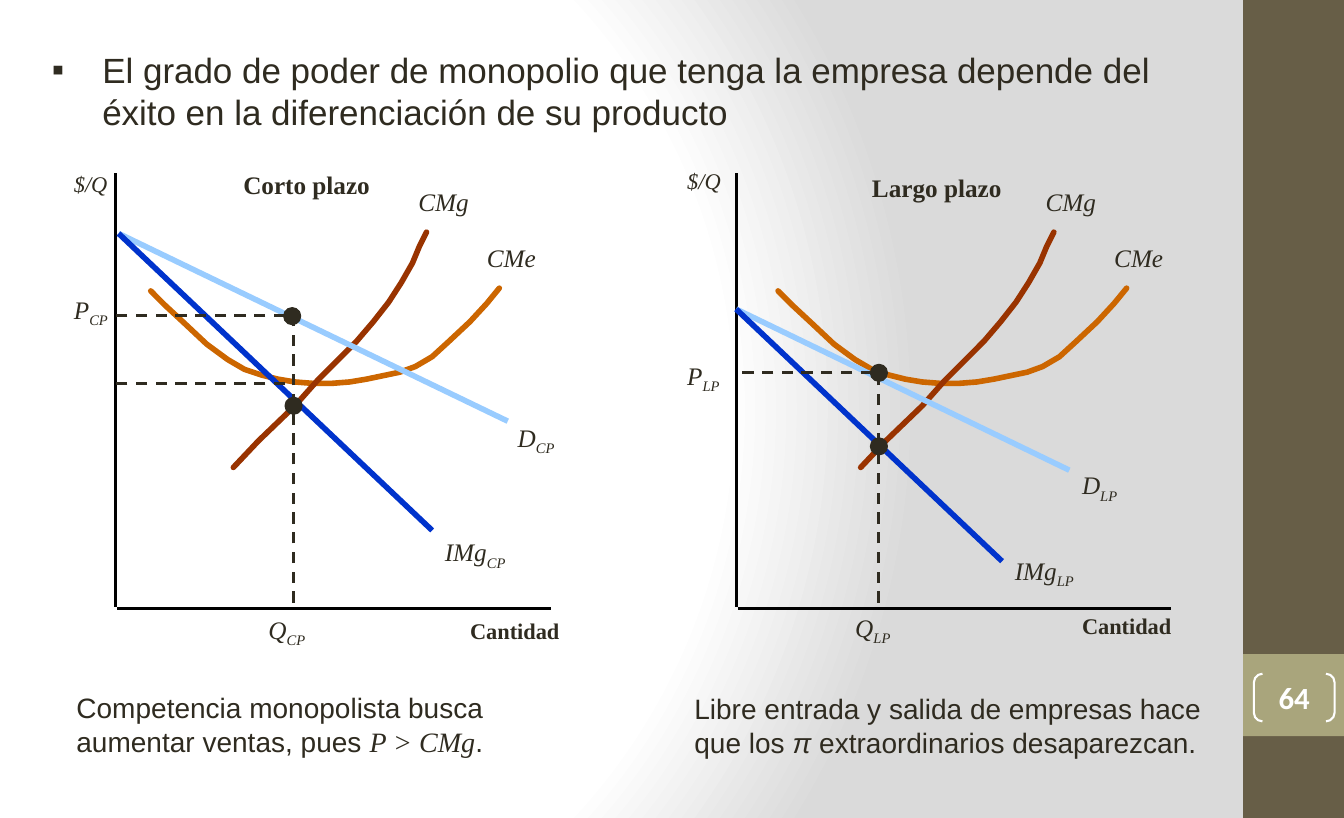
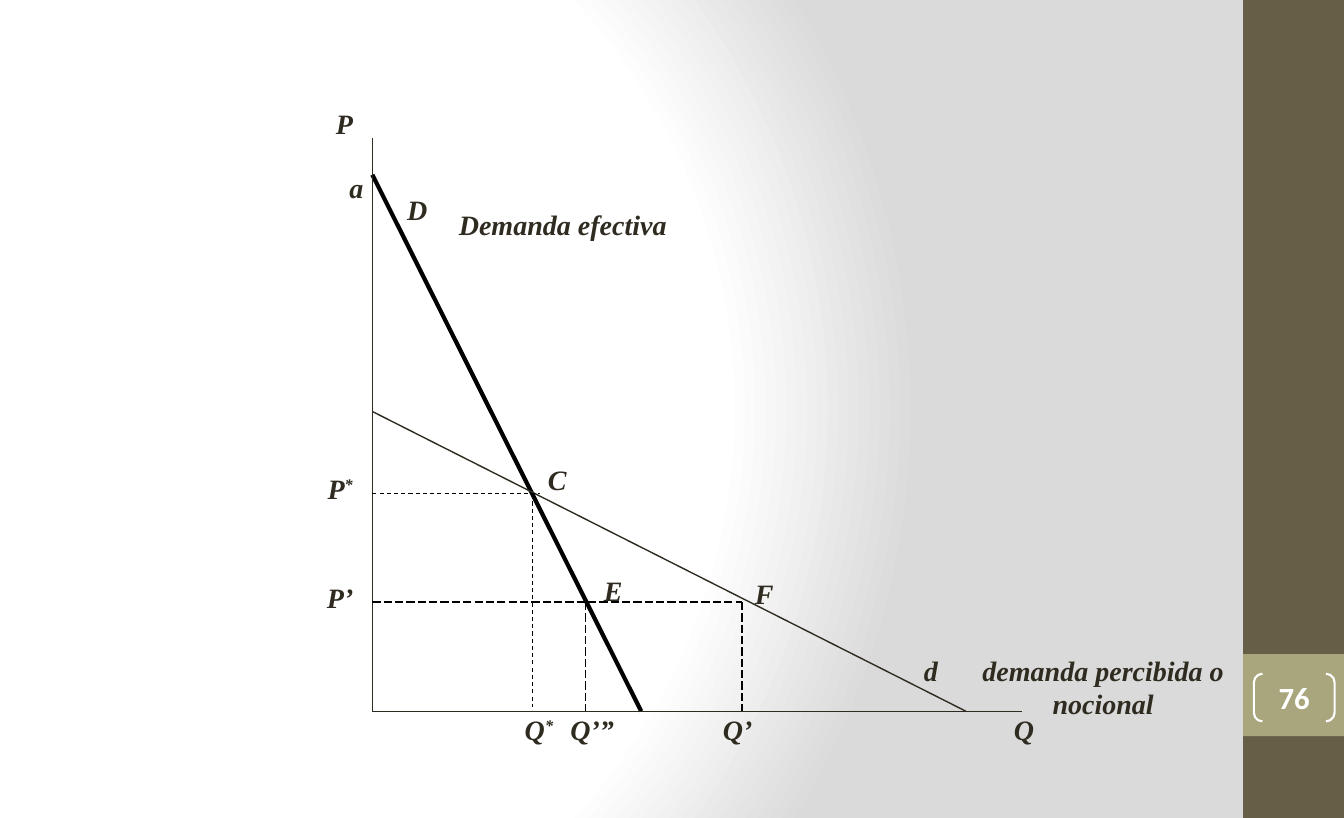
from dataclasses import dataclass

from lxml import etree
from pptx import Presentation
from pptx.dml.color import RGBColor
from pptx.enum.dml import MSO_LINE_DASH_STYLE as Dash
from pptx.enum.shapes import MSO_CONNECTOR, MSO_SHAPE as Shape
from pptx.enum.text import MSO_ANCHOR as Anchor, PP_ALIGN as Align
from pptx.oxml import parse_xml
from pptx.oxml.ns import nsdecls, qn
from pptx.util import Pt


@dataclass(frozen=True)
class Theme:
    width: float = 960
    height: float = 584
    band_width: float = 72
    # Colours
    ink: str = "2F2B20"
    black: str = "000000"
    white: str = "FFFFFF"
    shade: str = "DADADA"
    band: str = "675E47"
    tab: str = "A9A57C"
    average_cost: str = "CC6600"
    marginal_cost: str = "993300"
    demand: str = "99CCFF"
    revenue: str = "0033CC"
    # Fonts and type sizes
    sans: str = "Arial"
    serif: str = "Times New Roman"
    number_font: str = "Calibri"
    lead: float = 25
    number: float = 22
    body: float = 20
    label: float = 18
    axis: float = 16


T = Theme()

# Cost curves, measured from the left end of the average cost curve
AVERAGE_COST = [(0, 84), (10, 94), (24, 107), (40, 122), (55, 133), (67, 140),
                (79, 144), (91, 147), (103, 149), (116, 150), (129, 150),
                (142, 149), (154, 147), (178, 142), (189, 138), (201, 131),
                (213, 120), (228, 106), (240, 93), (249, 82)]
MARGINAL_COST = [(59, 210), (77, 191), (103, 166), (119, 148), (133, 134),
                 (147, 120), (159, 106), (170, 92), (179, 78), (187, 64),
                 (192, 52), (197, 42)]


@dataclass(frozen=True)
class Term:
    """One market panel; positions are relative to the top of its price axis."""
    title: str
    sub: str
    cost_x: float
    start: tuple
    demand_end: tuple
    revenue_end: tuple
    quantity: float
    prices: tuple
    dots: tuple
    at: dict


SHORT = Term("Corto plazo", "CP", 25, (2, 43), (280, 177), (226, 255), 127,
             ((121, 101.5), (121, 150)), ((126, 102), (127, 166)),
             {"unit": (-37, -6), "title": (84, -6), "D": (280, 174),
              "IMg": (228, 256), "Q": (102, 311), "P": (-37, 83),
              "Cantidad": (246, 313)})
LONG = Term("Largo plazo", "LP", 30, (0, 97), (238, 212), (190, 277), 102,
            ((97, 142.5),), ((102, 142.5), (102, 195)),
            {"unit": (-42, -8), "title": (90, -4), "D": (240, 208),
             "IMg": (192, 269), "Q": (78, 310), "P": (-42, 130),
             "Cantidad": (240, 310)})


def rgb(color):
    return RGBColor.from_string(color)


def add_line(s, start, end, color, width, dash=None):
    c = s.shapes.add_connector(MSO_CONNECTOR.STRAIGHT,
                               *(Pt(v) for v in (*start, *end)))
    c.line.color.rgb = rgb(color)
    c.line.width = Pt(width)
    if dash:
        c.line.dash_style = dash
    etree.SubElement(c.element.spPr, qn("a:effectLst"))


def add_curve(s, points, color, width):
    first, *rest = [(Pt(x), Pt(y)) for x, y in points]
    builder = s.shapes.build_freeform(*first)
    builder.add_line_segments(rest, close=False)
    sp = builder.convert_to_shape()
    sp.shadow.inherit = False
    sp.fill.background()
    sp.line.color.rgb = rgb(color)
    sp.line.width = Pt(width)
    sp.element.spPr.find(qn("a:ln")).set("cap", "rnd")


def add_shape(s, kind, box, fill=None, line=None, width=1):
    sp = s.shapes.add_shape(kind, *(Pt(v) for v in box))
    sp.shadow.inherit = False
    if fill:
        sp.fill.solid()
        sp.fill.fore_color.rgb = rgb(fill)
    else:
        sp.fill.background()
    if line:
        sp.line.color.rgb = rgb(line)
        sp.line.width = Pt(width)
    else:
        sp.line.fill.background()
    return sp


def style_run(r, size, font, color=T.ink, bold=False, italic=False, base=0):
    r.font.size = Pt(size)
    r.font.name = font
    r.font.color.rgb = rgb(color)
    r.font.bold = bold
    r.font.italic = italic
    if base:
        r.font._element.set("baseline", str(base * 1000))


def add_text(s, box, runs, size, font, align=Align.LEFT, before=0, margin=0,
             **style):
    """Each run is a text, or a text with its own style changes."""
    sp = s.shapes.add_textbox(*(Pt(v) for v in box))
    tf = sp.text_frame
    tf.word_wrap = True
    p = tf.paragraphs[0]
    p.alignment = align
    p.space_before = Pt(before)
    if margin:
        p._p.get_or_add_pPr().set("marL", str(Pt(margin)))
    for run in runs:
        text, changes = (run, {}) if isinstance(run, str) else run
        r = p.add_run()
        r.text = text
        style_run(r, **{"size": size, "font": font, **style, **changes})
    return sp


def set_background(master):
    fill = master.background.fill
    fill.gradient()
    old = master.element.find(".//" + qn("a:gradFill"))
    stops = "".join(
        f'<a:gs pos="{pos * 1000}"><a:srgbClr val="{color}"/></a:gs>'
        for pos, color in ((0, T.white), (75, T.white), (100, T.shade)))
    old.getparent().replace(old, parse_xml(
        f'<a:gradFill {nsdecls("a")} rotWithShape="1"><a:gsLst>{stops}</a:gsLst>'
        '<a:path path="circle"><a:fillToRect l="20000" t="50000" r="100000"'
        ' b="50000"/></a:path></a:gradFill>'))


def new_slide(prs, number):
    s = prs.slides.add_slide(prs.slide_layouts[6])
    # Side band and its tab
    left = T.width - T.band_width
    add_shape(s, Shape.RECTANGLE, (left, 0, T.band_width, T.height), T.band)
    add_shape(s, Shape.RECTANGLE, (left, 467, T.band_width, 58.5), T.tab)
    # Slide number
    sp = add_shape(s, Shape.DOUBLE_BRACKET, (left + 7.7, 481, 57.6, 34),
                   line=T.white, width=1.5)
    sp.adjustments[0] = 0.18
    tf = sp.text_frame
    tf.margin_left = tf.margin_right = tf.margin_top = tf.margin_bottom = 0
    tf.vertical_anchor = Anchor.MIDDLE
    tf.text = str(number)
    p = tf.paragraphs[0]
    p.alignment = Align.CENTER
    style_run(p.runs[0], T.number, T.number_font, T.white, bold=True)
    return s


def market_panel(s, left, top, term):
    def at(x, y):
        return left + x, top + y

    def label(pos, width, *runs, size=T.label, italic=True, bold=False):
        add_text(s, (*at(*pos), width, 1.6 * size), runs, size, T.serif,
                 italic=italic, bold=bold)

    # Axes
    add_line(s, at(0, 0), at(0, 310), T.black, 2)
    add_line(s, at(1, 311), at(311, 311), T.black, 2)
    label(term.at["unit"], 60, "$/Q", size=T.axis)
    label(term.at["Cantidad"], 100, "Cantidad", size=T.axis, italic=False,
          bold=True)
    label(term.at["title"], 130, term.title, italic=False, bold=True)

    # Cost curves
    for points, color in ((AVERAGE_COST, T.average_cost),
                          (MARGINAL_COST, T.marginal_cost)):
        add_curve(s, [at(term.cost_x + x, y) for x, y in points], color, 4)
    label((term.cost_x + 184, 6), 70, "CMg")
    label((term.cost_x + 233, 46), 70, "CMe")

    # Demand and marginal revenue
    add_line(s, at(*term.start), at(*term.demand_end), T.demand, 4)
    add_line(s, at(*term.start), at(*term.revenue_end), T.revenue, 4)
    for name in ("D", "IMg", "Q", "P"):
        label(term.at[name], 80, name, (term.sub, {"base": -25}))

    # Guides and equilibrium points
    add_line(s, at(term.quantity, 306.5),
             at(term.quantity, term.dots[0][1] + 5), T.ink, 2, Dash.DASH)
    for x, y in term.prices:
        add_line(s, at(x, y), at(-1, y), T.ink, 2, Dash.DASH)
    for x, y in term.dots:
        add_shape(s, Shape.OVAL, (*at(x - 6, y - 6), 12, 12), T.ink, T.ink)


def monopoly_slide(prs):
    s = new_slide(prs, 64)
    # Lead sentence
    sp = add_text(s, (30, 31, 819, 68),
                  ["El grado de poder de monopolio que tenga la empresa depende "
                   "del éxito en la diferenciación de su producto"],
                  T.lead, T.sans, margin=36)
    pPr = sp.text_frame.paragraphs[0]._p.get_or_add_pPr()
    pPr.set("indent", str(-Pt(36)))
    etree.SubElement(pPr, qn("a:buFont")).set("typeface", T.sans)
    etree.SubElement(pPr, qn("a:buChar")).set("char", "▪")
    # Panels
    market_panel(s, 82.7, 123.7, SHORT)
    market_panel(s, 525.8, 123.7, LONG)
    # Captions
    add_text(s, (11.5, 489.5, 412, 58),
             ["Competencia monopolista busca aumentar ventas, pues ",
              ("P > CMg", {"font": T.serif, "italic": True}), "."],
             T.body, T.sans, before=4, margin=36)
    add_text(s, (481.7, 490.3, 386, 56),
             ["Libre entrada y salida de empresas hace que los ",
              ("π", {"italic": True}), " extraordinarios desaparezcan."],
             T.body, T.sans, before=4, margin=7.2)


def demand_chart(s, left, top):
    def at(x, y):
        return left + x, top + y

    base = 409
    # Demand lines and axes
    for start, end, color, width in (
            ((0, 26), (192, base), T.black, 3),
            ((0, 195), (424, base), T.ink, 1),
            ((0, 0), (0, base), T.ink, 0.75),
            ((0, base), (464, base), T.ink, 0.75)):
        add_line(s, at(*start), at(*end), color, width)
    # Guides
    for start, end, dash in (
            ((0, 253.5), (120, 253.5), Dash.DASH),
            ((114.5, 254), (114.5, 406), Dash.DASH),
            ((0, 331), (264, 331), Dash.LONG_DASH),
            ((152, 331), (152, base), Dash.LONG_DASH),
            ((264, 331), (264, base), Dash.LONG_DASH)):
        add_line(s, at(*start), at(*end), T.black, 0.75, dash)
    # Labels
    star = ("*", {"base": 30})
    for x, y, width, *runs in (
            (-48, -26, 56, "P"), (-48, 19.5, 73, "a"), (4, 35, 56, "D"),
            (24, 46, 224, "Demanda efectiva"), (104, 228, 56, "C"),
            (144, 307, 56, "E"), (252, 309, 56, "F"), (371, 364, 56, "d"),
            (410, 364, 224, "demanda percibida o nocional"),
            (-55, 234, 64, "P", star), (-55, 312, 64, "P’"),
            (87, 406, 64, "Q", star), (125, 406, 64, "Q’”"),
            (229, 406, 64, "Q’"), (439, 406, 53, "Q")):
        add_text(s, (*at(x, y), width, 40), runs, T.body, T.serif,
                 align=Align.CENTER, before=4, bold=True, italic=True)


def main():
    prs = Presentation()
    prs.slide_width, prs.slide_height = Pt(T.width), Pt(T.height)
    set_background(prs.slide_master)
    monopoly_slide(prs)
    demand_chart(new_slide(prs, 76), 266, 98.8)
    prs.save("out.pptx")


if __name__ == "__main__":
    main()
